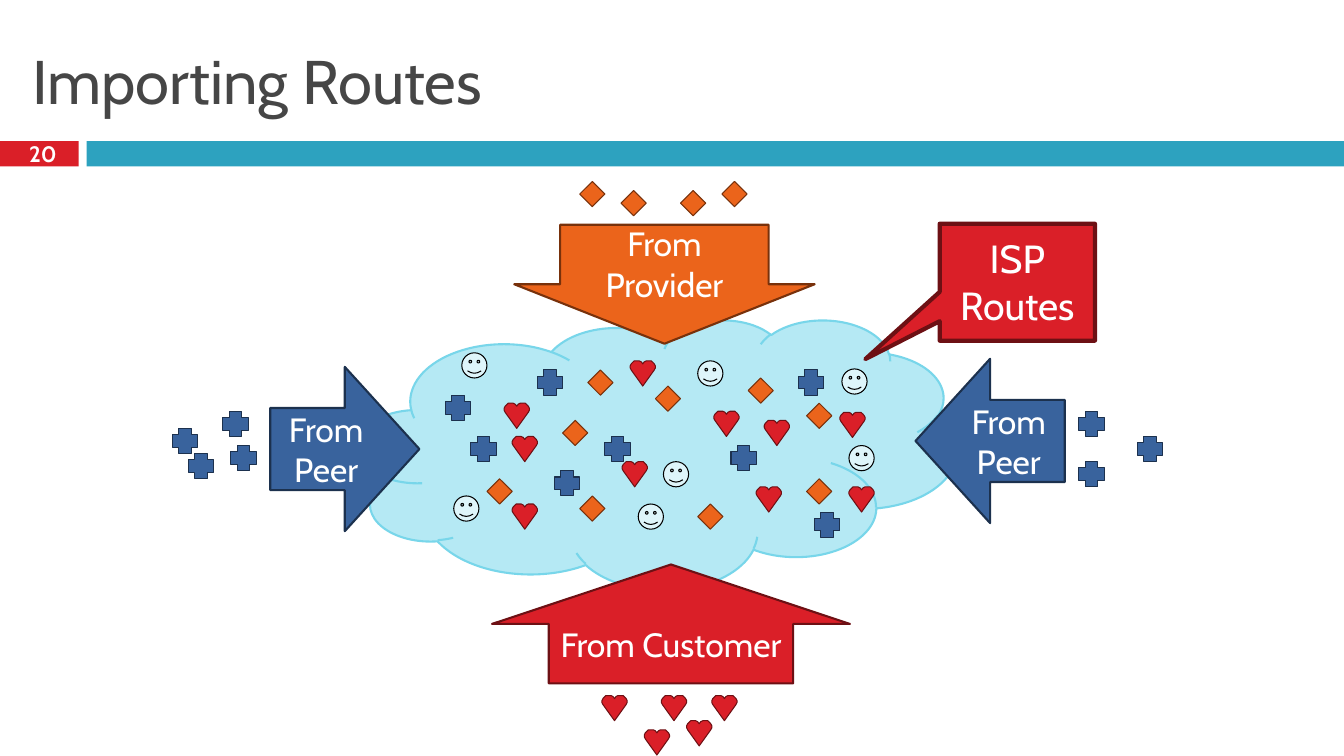
from dataclasses import dataclass

from pptx import Presentation
from pptx.dml.color import RGBColor
from pptx.enum.shapes import MSO_SHAPE
from pptx.enum.text import MSO_ANCHOR, MSO_AUTO_SIZE, PP_ALIGN
from pptx.shapes.autoshape import Shape
from pptx.slide import Slide
from pptx.text.text import TextFrame
from pptx.util import Inches, Pt

FONT = "Cabin"
WHITE = RGBColor(0xFF, 0xFF, 0xFF)
BLACK = RGBColor(0x00, 0x00, 0x00)
GRAY = RGBColor(0x46, 0x46, 0x46)
TEAL = RGBColor(0x2D, 0xA2, 0xBF)
RED = RGBColor(0xDA, 0x1F, 0x28)
DARK_RED = RGBColor(0x6D, 0x10, 0x14)
ORANGE = RGBColor(0xEB, 0x64, 0x1B)
BROWN = RGBColor(0x78, 0x31, 0x0B)
BLUE = RGBColor(0x39, 0x63, 0x9D)
NAVY = RGBColor(0x1C, 0x31, 0x4E)
PALE_BLUE = RGBColor(0xDE, 0xF5, 0xFA)
CLOUD_FILL = RGBColor(0xB5, 0xE9, 0xF4)
CLOUD_LINE = RGBColor(0x78, 0xD6, 0xEA)

Box = tuple[float, float, float, float]
Point = tuple[float, float]

ROUTE_SIZE = 0.25
# Left half of a heart from its cusp down to its tip, in inches
HEART_HALF: list[Point] = [
    (0.125, 0.03), (0.11, 0.01), (0.09, 0.0), (0.06, 0.0), (0.04, 0.0), (0.02, 0.02),
    (0.01, 0.03), (0.0, 0.05), (0.0, 0.07), (0.01, 0.09), (0.125, 0.25),
]


@dataclass(frozen=True)
class RouteKind:
    preset: MSO_SHAPE | None  # None stands for the heart outline
    fill: RGBColor
    line: RGBColor
    positions: list[Point]


@dataclass(frozen=True)
class Arrow:
    text: str
    preset: MSO_SHAPE
    box: Box
    fill: RGBColor
    line: RGBColor
    shaft: float = 0.5


ROUTES = [
    RouteKind(MSO_SHAPE.DIAMOND, ORANGE, BROWN, [
        (8, 4), (5.75, 4.92), (8, 4.75), (5.83, 3.67), (7.42, 3.75), (6.92, 5),
        (6.5, 3.83), (4.83, 4.75), (5.58, 4.17),
        (6.75, 1.89), (5.75, 1.8), (7.16, 1.8), (6.16, 1.89),
    ]),
    RouteKind(MSO_SHAPE.CROSS, BLUE, NAVY, [
        (4.42, 3.92), (6, 4.33), (8.08, 5.08), (7.92, 3.67), (4.67, 4.33),
        (5.5, 4.67), (7.25, 4.42), (5.33, 3.67),
        (10.7, 4.58), (1.87, 4.5), (2.29, 4.42), (1.71, 4.25), (2.21, 4.08),
        (10.7, 4.08), (11.28, 4.33),
    ]),
    RouteKind(MSO_SHAPE.SMILEY_FACE, PALE_BLUE, BLACK, [
        (6.33, 5), (6.92, 3.58), (4.5, 4.92), (4.58, 3.5), (8.42, 4.42),
        (6.58, 4.58), (8.35, 3.66),
    ]),
    RouteKind(None, RED, DARK_RED, [
        (8.42, 4.83), (7.5, 4.83), (5.08, 5), (5.08, 4.33), (5, 4), (6.17, 4.58),
        (7.08, 4.08), (6.25, 3.58), (8.33, 4.09), (7.58, 4.17),
        (6.39, 7.24), (6.81, 7.15), (5.97, 6.9), (7.06, 6.9), (6.56, 6.9),
    ]),
]

ARROWS = [
    Arrow("From Provider", MSO_SHAPE.DOWN_ARROW, (5.1, 2.23, 2.98, 1.18), ORANGE, BROWN, 0.694),
    Arrow("From Peer", MSO_SHAPE.LEFT_ARROW, (9.08, 3.56, 1.48, 1.63), BLUE, NAVY),
    Arrow("From Peer", MSO_SHAPE.RIGHT_ARROW, (2.68, 3.64, 1.48, 1.63), BLUE, NAVY),
    Arrow("From Customer", MSO_SHAPE.UP_ARROW, (4.88, 5.6, 3.55, 1.18), RED, DARK_RED, 0.683),
]


def paint(shape: Shape, fill: RGBColor, line: RGBColor | None, width: float) -> None:
    shape.shadow.inherit = False
    shape.fill.solid()
    shape.fill.fore_color.rgb = fill
    if line is None:
        shape.line.fill.background()
    else:
        shape.line.color.rgb = line
        shape.line.width = Pt(width)


def add_preset(slide: Slide, preset: MSO_SHAPE, box: Box, fill: RGBColor,
               line: RGBColor | None = None, width: float = 0.75) -> Shape:
    shape = slide.shapes.add_shape(preset, *map(Inches, box))
    paint(shape, fill, line, width)
    return shape


def write(frame: TextFrame, text: str, *, size: float, color: RGBColor = WHITE,
          bold: bool = False, align: PP_ALIGN = PP_ALIGN.CENTER) -> None:
    frame.word_wrap = True
    frame.auto_size = MSO_AUTO_SIZE.NONE
    frame.vertical_anchor = MSO_ANCHOR.MIDDLE
    paragraph = frame.paragraphs[0]
    paragraph.alignment = align
    run = paragraph.add_run()
    run.text = text
    run.font.name = FONT
    run.font.size = Pt(size)
    run.font.bold = bold
    run.font.color.rgb = color


def add_heart(slide: Slide, left: float, top: float) -> Shape:
    right_half = [(ROUTE_SIZE - x, y) for x, y in reversed(HEART_HALF[1:-1])]
    points = [(Inches(left + x), Inches(top + y)) for x, y in HEART_HALF + right_half]
    builder = slide.shapes.build_freeform(*points[0])
    builder.add_line_segments(points[1:], close=True)
    return builder.convert_to_shape()


def add_routes(slide: Slide, kind: RouteKind) -> None:
    for left, top in kind.positions:
        if kind.preset is None:
            paint(add_heart(slide, left, top), kind.fill, kind.line, 0.75)
        else:
            box = (left, top, ROUTE_SIZE, ROUTE_SIZE)
            add_preset(slide, kind.preset, box, kind.fill, kind.line)


def add_arrow(slide: Slide, arrow: Arrow) -> None:
    shape = add_preset(slide, arrow.preset, arrow.box, arrow.fill, arrow.line, 1.5)
    shape.adjustments[0] = arrow.shaft
    shape.adjustments[1] = 0.5
    write(shape.text_frame, arrow.text, size=24)


def main() -> None:
    presentation = Presentation()
    presentation.slide_width = Inches(13.33)
    presentation.slide_height = Inches(7.5)
    slide = presentation.slides.add_slide(presentation.slide_layouts[5])

    # Title
    title = slide.shapes.title
    title.left, title.top, title.width, title.height = map(Inches, (0.22, 0.25, 12.89, 1.08))
    write(title.text_frame, "Importing Routes", size=44, color=GRAY, align=PP_ALIGN.LEFT)

    # Header bar and slide number
    add_preset(slide, MSO_SHAPE.RECTANGLE, (0, 1.4, 0.78, 0.25), RED)
    add_preset(slide, MSO_SHAPE.RECTANGLE, (0.86, 1.4, 12.47, 0.25), TEAL)
    number = slide.shapes.add_textbox(*map(Inches, (-0.01, 1.38, 0.87, 0.29)))
    write(number.text_frame, "20", size=16, bold=True)

    # Network cloud with its routes
    add_preset(slide, MSO_SHAPE.CLOUD, (3.54, 3.17, 5.95, 2.68), CLOUD_FILL, CLOUD_LINE, 1.5)
    for kind in ROUTES:
        add_routes(slide, kind)

    # Import arrows
    for arrow in ARROWS:
        add_arrow(slide, arrow)

    # Callout
    callout = add_preset(slide, MSO_SHAPE.RECTANGULAR_CALLOUT, (9.32, 2.22, 1.54, 1.16),
                         RED, DARK_RED, 3)
    callout.adjustments[0] = -0.979
    callout.adjustments[1] = 0.658
    label = slide.shapes.add_textbox(*map(Inches, (9.32, 2.27, 1.54, 1.04)))
    write(label.text_frame, "ISP Routes", size=28)

    presentation.save("out.pptx")


if __name__ == "__main__":
    main()
